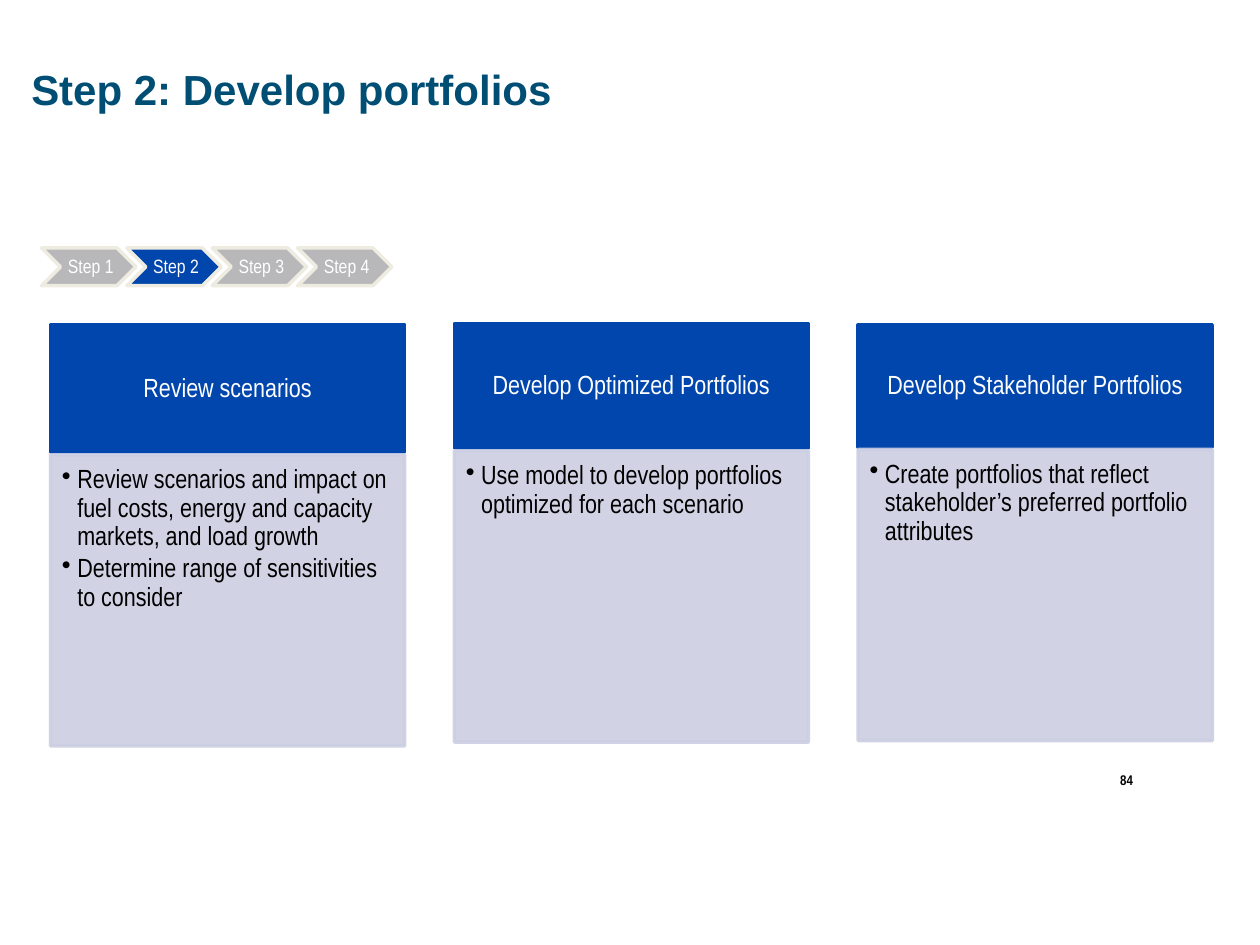
from pptx import Presentation
from pptx.dml.color import RGBColor
from pptx.enum import shapes, text
from pptx.oxml import parse_xml
from pptx.oxml.ns import nsdecls, qn
from pptx.util import Cm, Pt

TITLE = "Step 2: Develop portfolios"
PAGE_NUMBER = "84"
STEPS = ["Step 1", "Step 2", "Step 3", "Step 4"]
ACTIVE_STEP = "Step 2"
COLUMNS = [
    {"heading": "Review scenarios", "top": 6.55, "height": 2.57,
     "points": ["Review scenarios and impact on fuel costs, energy and capacity markets, and load growth",
                "Determine range of sensitivities to consider"]},
    {"heading": "Develop Optimized Portfolios", "top": 6.53, "height": 2.51,
     "points": ["Use model to develop portfolios optimized for each scenario"]},
    {"heading": "Develop Stakeholder Portfolios", "top": 6.55, "height": 2.46,
     "points": ["Create portfolios that reflect stakeholder’s preferred portfolio attributes"]},
]
COLORS = {"title": "004E74", "blue": "0046AD", "pale": "CCCFE3", "gray": "B8B8BA",
          "cream": "EEECE1", "white": "FFFFFF", "black": "000000"}
NARROW = "Arial Narrow"
COLUMN_LEFT, COLUMN_PITCH, COLUMN_WIDTH = 1.02, 8.14, 7.14
BODY_GAP, BODY_HEIGHT = 0.05, 5.87
STEP_LEFT, STEP_PITCH, STEP_TOP, STEP_WIDTH, STEP_HEIGHT = 0.84, 1.72, 5, 1.9, 0.76


def color(name):
    return RGBColor.from_string(COLORS[name])


def add_span(para, words, size, tint, font=NARROW, bold=False):
    span = para.add_run()
    span.text = words
    span.font.name = font
    span.font.size = Pt(size)
    span.font.bold = bold
    span.font.color.rgb = color(tint)


def set_frame(frame, anchor, margins):
    frame.auto_size = text.MSO_AUTO_SIZE.NONE
    frame.word_wrap = True
    frame.vertical_anchor = anchor
    frame.margin_left, frame.margin_top, frame.margin_right, frame.margin_bottom = map(Cm, margins)


def add_block(page, kind, place, fill, line):
    block = page.shapes.add_shape(kind, *map(Cm, place))
    block.shadow.inherit = False
    block.fill.solid()
    block.fill.fore_color.rgb = color(fill)
    block.line.color.rgb = color(line)
    block.line.width = Pt(2)
    return block


def add_label(block, words, size, margins):
    set_frame(block.text_frame, text.MSO_ANCHOR.MIDDLE, margins)
    para = block.text_frame.paragraphs[0]
    para.alignment = text.PP_ALIGN.CENTER
    para.line_spacing = 0.9
    add_span(para, words, size, "white")


def set_opacity(block, percent):
    for tint in block._element.spPr.iter(qn("a:srgbClr")):
        tint.append(parse_xml(f'<a:alpha {nsdecls("a")} val="{percent * 1000}"/>'))


def add_points(block, points):
    set_frame(block.text_frame, text.MSO_ANCHOR.TOP, (0.23, 0.23, 0.3, 0.33))
    for index, words in enumerate(points):
        para = block.text_frame.add_paragraph() if index else block.text_frame.paragraphs[0]
        properties = para._p.get_or_add_pPr()
        properties.set("marL", str(Cm(0.31)))
        properties.set("indent", str(-Cm(0.31)))
        properties.append(parse_xml(f'<a:buChar {nsdecls("a")} char="•"/>'))
        para.level = 1
        para.alignment = text.PP_ALIGN.LEFT
        para.line_spacing = 0.9
        para.space_after = Pt(2.25)
        add_span(para, words, 15, "black")


def add_title(page):
    box = page.shapes.title
    box.left, box.top, box.width, box.height = map(Cm, (0.38, 0.48, 16.05, 2.79))
    set_frame(box.text_frame, text.MSO_ANCHOR.MIDDLE, (0.25, 0.13, 0.25, 0.13))
    para = box.text_frame.paragraphs[0]
    para.alignment = text.PP_ALIGN.LEFT
    para.line_spacing = 0.85
    add_span(para, TITLE, 24, "title", "Arial", True)


def add_page_number(page):
    box = page.shapes.add_textbox(*map(Cm, (19.2, 15.42, 3.89, 0.81)))
    box.text_frame.word_wrap = True
    para = box.text_frame.paragraphs[0]
    para.alignment = text.PP_ALIGN.RIGHT
    add_span(para, PAGE_NUMBER, 8, "black", bold=True)


def main():
    deck = Presentation()
    deck.slide_width, deck.slide_height = Cm(25.4), Cm(19.05)
    page = deck.slides.add_slide(deck.slide_layouts[5])
    add_title(page)
    add_page_number(page)

    for index, column in enumerate(COLUMNS):
        left = COLUMN_LEFT + index * COLUMN_PITCH
        top, height = column["top"], column["height"]
        header = add_block(page, shapes.MSO_SHAPE.RECTANGLE,
                           (left, top, COLUMN_WIDTH, height), "blue", "blue")
        add_label(header, column["heading"], 15, (0.3, 0.18, 0.3, 0.18))
        body = add_block(page, shapes.MSO_SHAPE.RECTANGLE,
                         (left, top + height + BODY_GAP, COLUMN_WIDTH, BODY_HEIGHT), "pale", "pale")
        set_opacity(body, 90)
        add_points(body, column["points"])

    for index, step in enumerate(STEPS):
        fill = "blue" if step == ACTIVE_STEP else "gray"
        place = (STEP_LEFT + index * STEP_PITCH, STEP_TOP, STEP_WIDTH, STEP_HEIGHT)
        chevron = add_block(page, shapes.MSO_SHAPE.CHEVRON, place, fill, "cream")
        add_label(chevron, step, 11, (0.13, 0.05, 0.05, 0.05))
        chevron.text_frame.word_wrap = False

    deck.save("out.pptx")


if __name__ == "__main__":
    main()
